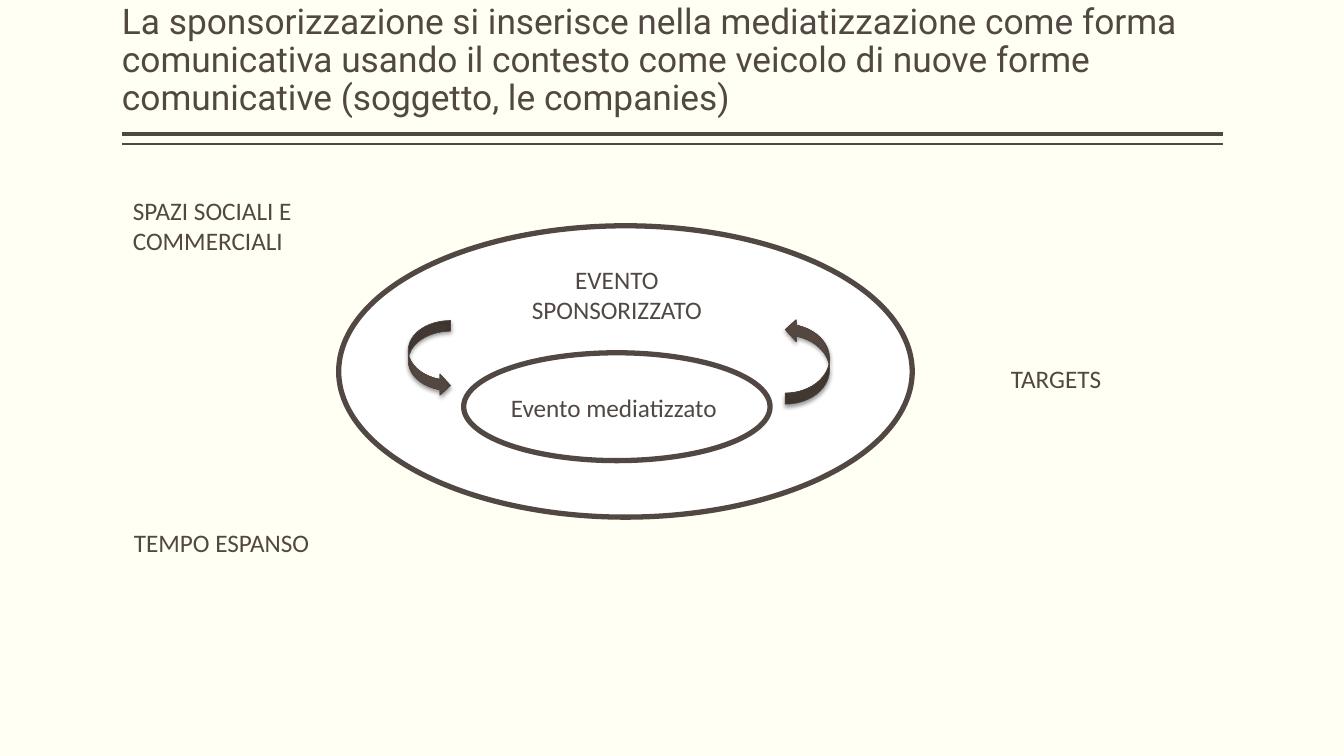
from dataclasses import dataclass

from lxml import etree
from pptx import Presentation
from pptx.dml.color import RGBColor
from pptx.enum.shapes import MSO_CONNECTOR as Link, MSO_SHAPE as Form
from pptx.enum.text import MSO_ANCHOR as Anchor, PP_ALIGN as Align
from pptx.oxml import parse_xml
from pptx.oxml.ns import nsdecls, qn
from pptx.util import Pt

INK = "514843"
WHITE = "FFFFFF"
CREAM = "FFFFF3"
EDGE = "504641"

GRAD = f"""<a:gradFill {nsdecls("a")} rotWithShape="1"><a:gsLst>
<a:gs pos="0"><a:srgbClr val="544740"/></a:gs>
<a:gs pos="71000"><a:srgbClr val="534740"/></a:gs>
<a:gs pos="100000"><a:srgbClr val="4A3F39"/></a:gs></a:gsLst>
<a:path path="rect"><a:fillToRect l="50000" t="50000" r="50000" b="50000"/></a:path>
</a:gradFill>"""
SHADE = f"""<a:outerShdw {nsdecls("a")} blurRad="{Pt(3.1)}" dist="{Pt(2)}"
dir="5400000" rotWithShape="0"><a:srgbClr val="000000"><a:alpha val="38000"/>
</a:srgbClr></a:outerShdw>"""


@dataclass
class Box:
    x: float
    y: float
    w: float
    h: float

    def place(self) -> tuple[Pt, Pt, Pt, Pt]:
        return Pt(self.x), Pt(self.y), Pt(self.w), Pt(self.h)


@dataclass
class Label:
    text: str
    box: Box
    align: Align = Align.LEFT


@dataclass
class Arrow:
    form: Form
    box: Box
    flip: bool = False


@dataclass
class Rule:
    y: float
    width: float


TITLE = ("La sponsorizzazione si inserisce nella mediatizzazione come forma "
         "comunicativa usando il contesto come veicolo di nuove forme "
         "comunicative (soggetto, le companies)")
LEFT, RIGHT = 87.12, 873.36
RULES = [Rule(95.76, 3), Rule(102.96, 1)]
RINGS = [Box(241.92, 161.28, 409.68, 208.08), Box(331.2, 252, 218.88, 77.04)]
LABELS = [
    Label("EVENTO SPONSORIZZATO", Box(347.04, 185.04, 187.2, 51), Align.CENTER),
    Label("SPAZI SOCIALI E COMMERCIALI", Box(87.84, 136.08, 161.28, 51)),
    Label("TEMPO ESPANSO", Box(88.56, 372.96, 185.04, 29)),
    Label("TARGETS", Box(714.96, 255.6, 173.52, 29)),
    Label("Evento mediatizzato", Box(339.12, 276.48, 198.72, 29), Align.CENTER),
]
ARROWS = [
    Arrow(Form.CURVED_RIGHT_ARROW, Box(291.6, 228.96, 30.24, 54)),
    Arrow(Form.CURVED_LEFT_ARROW, Box(560.88, 227.52, 31.68, 61.2), True),
]


def tint(code: str) -> RGBColor:
    return RGBColor.from_string(code)


def add_rule(slide, rule: Rule) -> None:
    line = slide.shapes.add_connector(
        Link.STRAIGHT, Pt(LEFT), Pt(rule.y), Pt(RIGHT), Pt(rule.y))
    line.line.color.rgb = tint(INK)
    line.line.width = Pt(rule.width)
    etree.SubElement(line._element.spPr, qn("a:effectLst"))


def add_ring(slide, box: Box) -> None:
    ring = slide.shapes.add_shape(Form.OVAL, *box.place())
    ring.shadow.inherit = False
    ring.fill.solid()
    ring.fill.fore_color.rgb = tint(WHITE)
    ring.line.color.rgb = tint(INK)
    ring.line.width = Pt(3.78)


def add_arrow(slide, arrow: Arrow) -> None:
    shape = slide.shapes.add_shape(arrow.form, *arrow.box.place())
    shape.line.color.rgb = tint(EDGE)
    shape.line.width = Pt(0.5)
    shape.shadow.inherit = False
    props = shape._element.spPr
    props.find(qn("a:prstGeom")).addnext(parse_xml(GRAD))
    props.find(qn("a:effectLst")).append(parse_xml(SHADE))
    if arrow.flip:
        props.find(qn("a:xfrm")).set("flipV", "1")


def add_text(slide, label: Label, font: str = "Calibri", size: float = 18):
    frame = slide.shapes.add_textbox(*label.box.place()).text_frame
    frame.word_wrap = True
    para = frame.paragraphs[0]
    para.alignment = label.align
    run = para.add_run()
    run.text = label.text
    run.font.name = font
    run.font.size = Pt(size)
    run.font.color.rgb = tint(INK)
    return frame


def add_title(slide) -> None:
    box = Box(LEFT, 5.76, RIGHT - LEFT, 82)
    frame = add_text(slide, Label(TITLE, box), "Roboto", 25.2)
    frame.vertical_anchor = Anchor.BOTTOM
    frame.margin_left = frame.margin_right = Pt(0)
    frame.paragraphs[0].line_spacing = 0.9


def main() -> None:
    deck = Presentation()
    deck.slide_width, deck.slide_height = Pt(960), Pt(540)
    slide = deck.slides.add_slide(deck.slide_layouts[6])
    slide.background.fill.solid()
    slide.background.fill.fore_color.rgb = tint(CREAM)

    # Heading with its double rule
    for rule in RULES:
        add_rule(slide, rule)
    add_title(slide)

    # Nested events and their labels
    for ring in RINGS:
        add_ring(slide, ring)
    for label in LABELS:
        add_text(slide, label)

    # Exchange between the two events
    for arrow in ARROWS:
        add_arrow(slide, arrow)
    deck.save("out.pptx")


if __name__ == "__main__":
    main()
